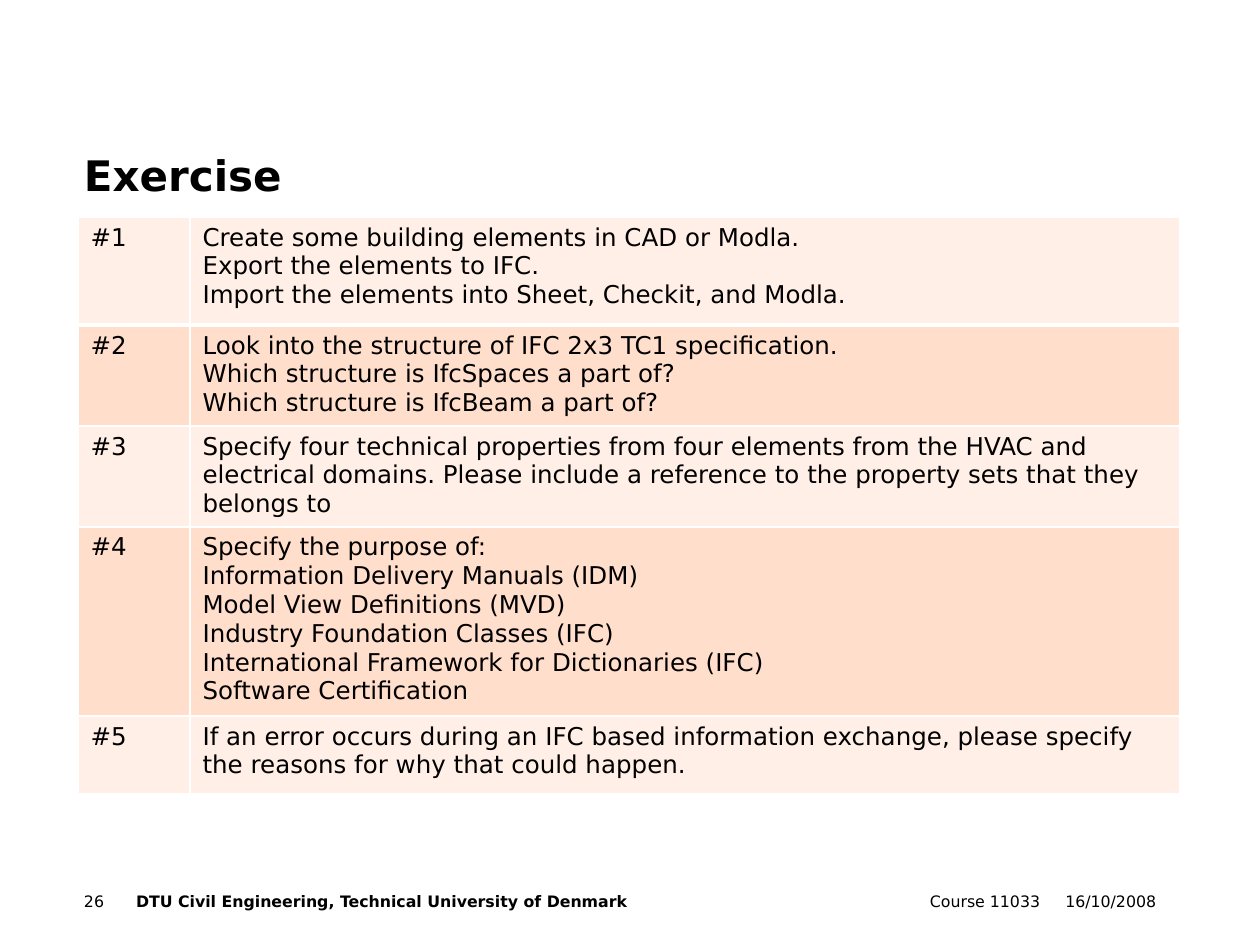
import lxml.etree
import pptx
import pptx.dml.color
import pptx.enum.text
import pptx.oxml.ns
import pptx.util

BLACK = pptx.dml.color.RGBColor(0x00, 0x00, 0x00)
WHITE = pptx.dml.color.RGBColor(0xFF, 0xFF, 0xFF)
LIGHT_PEACH = pptx.dml.color.RGBColor(0xFF, 0xEF, 0xE7)
DARK_PEACH = pptx.dml.color.RGBColor(0xFF, 0xDE, 0xCC)

LEFT = pptx.enum.text.PP_ALIGN.LEFT
RIGHT = pptx.enum.text.PP_ALIGN.RIGHT
TOP = pptx.enum.text.MSO_ANCHOR.TOP
BOTTOM = pptx.enum.text.MSO_ANCHOR.BOTTOM

EXERCISES = [
    ["Create some building elements in CAD or Modla.",
     "Export the elements to IFC.",
     "Import the elements into Sheet, Checkit, and Modla."],
    ["Look into the structure of IFC 2x3 TC1 specification.",
     "Which structure is IfcSpaces a part of?",
     "Which structure is IfcBeam a part of?"],
    ["Specify four technical properties from four elements from the HVAC and "
     "electrical domains. Please include a reference to the property sets that "
     "they belongs to"],
    ["Specify the purpose of:",
     "Information Delivery Manuals (IDM)",
     "Model View Definitions (MVD)",
     "Industry Foundation Classes (IFC)",
     "International Framework for Dictionaries (IFC)",
     "Software Certification"],
    ["If an error occurs during an IFC based information exchange, please "
     "specify the reasons for why that could happen."],
]


def px(length):
    return pptx.util.Emu(round(length * 914400 / 126))


def set_attributes(target, values):
    for name, value in values.items():
        setattr(target, name, value)


class SlideBuilder:
    font_name = "DejaVu Sans"

    def __init__(self, slide):
        self.slide = slide

    def fill_text(self, frame, lines, size, bold=False, align=LEFT):
        frame.text = "\n".join(lines)
        for paragraph in frame.paragraphs:
            paragraph.alignment = align
            set_attributes(paragraph.font, {
                "name": self.font_name,
                "size": pptx.util.Pt(size),
                "bold": bold,
            })
            paragraph.font.color.rgb = BLACK

    def text(self, box, line, size, bold=False, align=LEFT, anchor=TOP):
        frame = self.slide.shapes.add_textbox(*map(px, box)).text_frame
        set_attributes(frame, {
            "margin_left": 0, "margin_right": 0,
            "margin_top": 0, "margin_bottom": 0,
            "word_wrap": True, "vertical_anchor": anchor,
        })
        self.fill_text(frame, [line], size, bold, align)

    def border(self, cell, widths):
        properties = cell._tc.get_or_add_tcPr()
        for position, (side, width) in enumerate(widths.items()):
            line = lxml.etree.Element(pptx.oxml.ns.qn(f"a:ln{side}"),
                                      w=str(pptx.util.Pt(width)))
            fill = lxml.etree.SubElement(line, pptx.oxml.ns.qn("a:solidFill"))
            lxml.etree.SubElement(fill, pptx.oxml.ns.qn("a:srgbClr"),
                                  val=str(WHITE))
            properties.insert(position, line)

    def table(self, left, top, column_widths, row_heights, rows, size):
        table = self.slide.shapes.add_table(
            len(rows), len(column_widths), px(left), px(top),
            px(sum(column_widths)), px(sum(row_heights))).table
        for column, width in zip(table.columns, column_widths):
            column.width = px(width)
        for row_index, (height, contents) in enumerate(zip(row_heights, rows)):
            table.rows[row_index].height = px(height)
            for cell, lines in zip(table.rows[row_index].cells, contents):
                cell.fill.solid()
                cell.fill.fore_color.rgb = DARK_PEACH if row_index % 2 else LIGHT_PEACH
                self.fill_text(cell.text_frame, lines, size)
                self.border(cell, {
                    "L": 1, "R": 1,
                    "T": 3 if row_index == 1 else 1,
                    "B": 3 if row_index == 0 else 1,
                })


def main():
    presentation = pptx.Presentation()
    set_attributes(presentation, {"slide_width": px(1260), "slide_height": px(945)})
    slide = presentation.slides.add_slide(presentation.slide_layouts[6])
    builder = SlideBuilder(slide)

    builder.text((84, 42, 1071, 158), "Exercise", 24, bold=True, anchor=BOTTOM)
    rows = [([f"#{number}"], lines) for number, lines in enumerate(EXERCISES, 1)]
    builder.table(78, 217, [112, 990], [108, 98, 98, 185, 78], rows, 14)

    footers = [
        (84, 42, "26", False, LEFT),
        (136, 509, "DTU Civil Engineering, Technical University of Denmark", True, LEFT),
        (662, 378, "Course 11033", False, RIGHT),
        (1050, 106, "16/10/2008", False, RIGHT),
    ]
    for left, width, line, bold, align in footers:
        builder.text((left, 892, width, 42), line, 9, bold, align)

    presentation.save("out.pptx")


if __name__ == "__main__":
    main()
